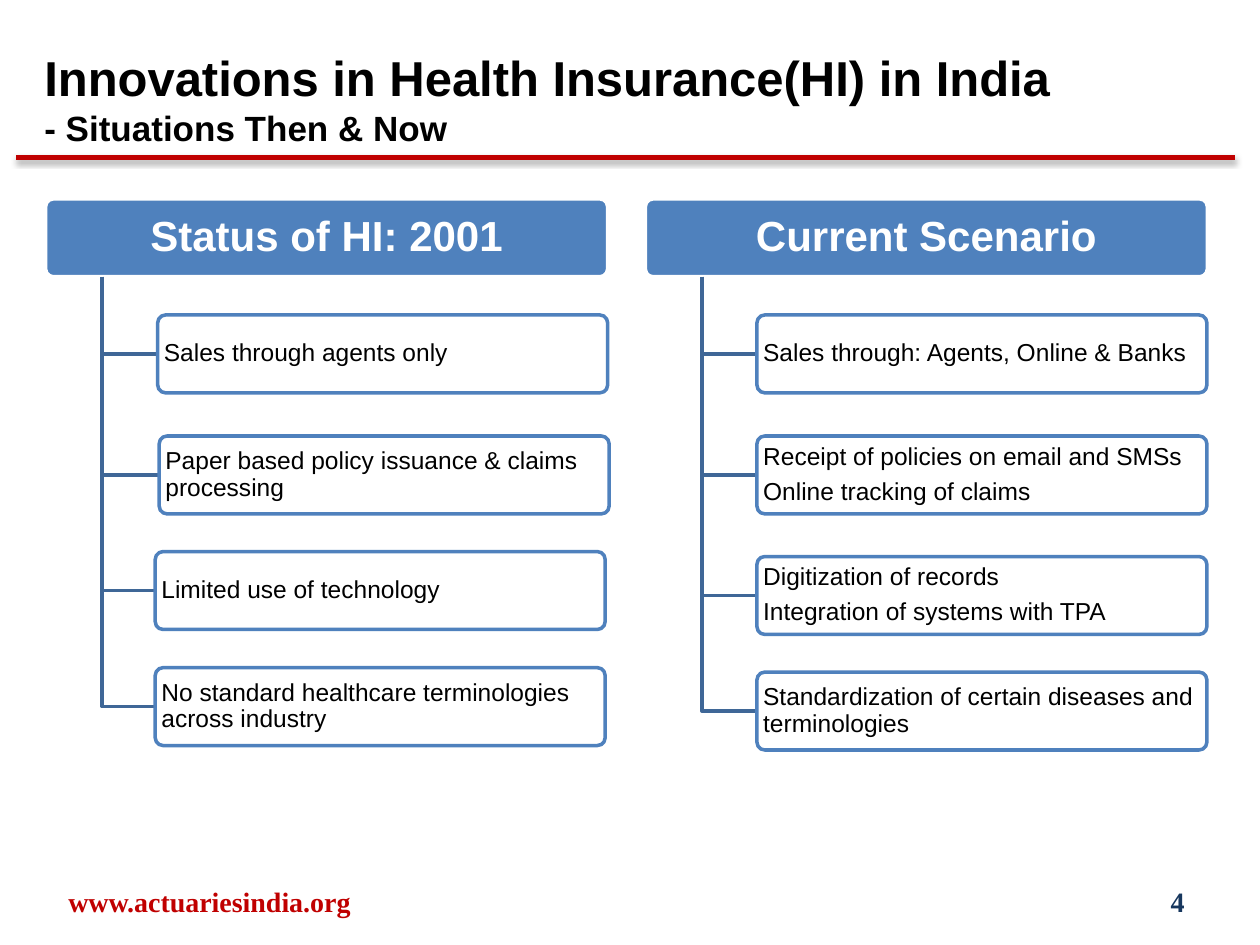
import pptx
import pptx.dml.color
import pptx.enum.shapes
import pptx.enum.text
import pptx.oxml
import pptx.oxml.ns
import pptx.util

Cm, Pt = pptx.util.Cm, pptx.util.Pt
SHAPE = pptx.enum.shapes.MSO_SHAPE
ALIGN = pptx.enum.text.PP_ALIGN
ANCHOR = pptx.enum.text.MSO_ANCHOR
NS = pptx.oxml.ns.nsdecls("a")

COLORS = {
    "black": "000000", "white": "FFFFFF", "red": "C00000",
    "navy": "17375E", "blue": "4F81BD", "branch": "3F6797",
}

# Column geometry in centimetres
HEAD_TOP, HEAD_W, BOX_W, BOX_H = 4.01, 11.33, 9.07, 1.57
TRUNK_DX = 1.14

# Each column: left edge, heading, boxes as (left, top, lines)
COLUMNS = [
    (0.92, "Status of HI: 2001", [
        (3.18, 6.35, ["Sales through agents only"]),
        (3.21, 8.79, ["Paper based policy issuance & claims processing"]),
        (3.13, 11.12, ["Limited use of technology"]),
        (3.13, 13.46, ["No standard healthcare terminologies across industry"]),
    ]),
    (13.01, "Current Scenario", [
        (15.26, 6.35, ["Sales through: Agents, Online & Banks"]),
        (15.26, 8.79, ["Receipt of policies on email and SMSs",
                       "Online tracking of claims"]),
        (15.26, 11.22, ["Digitization of records",
                        "Integration of systems with TPA"]),
        (15.26, 13.55, ["Standardization of certain diseases and terminologies"]),
    ]),
]


def rgb(name):
    return pptx.dml.color.RGBColor.from_string(COLORS[name])


def style(p, size, color, bold=False, font="Arial", align=ALIGN.LEFT):
    p.alignment = align
    p.font.name = font
    p.font.size = Pt(size)
    p.font.bold = bold
    p.font.color.rgb = rgb(color)


def add_title(s, lines):
    sp = s.shapes.title
    sp.left, sp.top, sp.width, sp.height = Cm(0.64), Cm(0.84), Cm(20.96), Cm(1.7)
    tf = sp.text_frame
    tf.text = "\n".join(text for text, size in lines)
    tf.auto_size = pptx.enum.text.MSO_AUTO_SIZE.NONE
    tf.vertical_anchor = ANCHOR.TOP
    for p, (text, size) in zip(tf.paragraphs, lines):
        style(p, size, "black", bold=True)


def add_rule(s):
    line = s.shapes.add_connector(pptx.enum.shapes.MSO_CONNECTOR.STRAIGHT,
                                  Cm(0.33), Cm(3.18), Cm(24.89), Cm(3.18))
    line.line.color.rgb = rgb("red")
    line.line.width = Pt(3)
    line._element.spPr.append(pptx.oxml.parse_xml(
        f'<a:effectLst {NS}><a:outerShdw blurRad="{Pt(3.1)}" dist="{Pt(1.6)}" '
        f'dir="5400000" rotWithShape="0"><a:srgbClr val="{COLORS["black"]}">'
        '<a:alpha val="38000"/></a:srgbClr></a:outerShdw></a:effectLst>'))


def add_footer(s, left, width, text, color, align):
    sp = s.shapes.add_textbox(Cm(left), Cm(17.65), Cm(width), Cm(1.02))
    tf = sp.text_frame
    tf.word_wrap = True
    tf.vertical_anchor = ANCHOR.MIDDLE
    tf.text = text
    style(tf.paragraphs[0], 16, color, True, "Times New Roman", align)


def add_box(s, left, top, width, lines, fill, line, inset, **font):
    sp = s.shapes.add_shape(SHAPE.ROUNDED_RECTANGLE,
                            Cm(left), Cm(top), Cm(width), Cm(BOX_H))
    sp.adjustments[0] = 0.1
    sp.shadow.inherit = False
    sp.fill.solid()
    sp.fill.fore_color.rgb = rgb(fill)
    sp.line.color.rgb = rgb(line)
    sp.line.width = Pt(2)
    tf = sp.text_frame
    tf.word_wrap = True
    tf.vertical_anchor = ANCHOR.MIDDLE
    tf.margin_left = tf.margin_right = Cm(inset)
    tf.margin_top = tf.margin_bottom = Cm(0.05)
    tf.text = "\n".join(lines)
    for p in tf.paragraphs:
        style(p, **font)
        p.line_spacing = 0.9
        p.space_after = Pt(font["size"] * 0.35)
    return sp


def add_branch(s, x, y, box_left, box_middle):
    builder = s.shapes.build_freeform(Cm(x), Cm(y))
    builder.add_line_segments([(Cm(x), Cm(box_middle)),
                               (Cm(box_left), Cm(box_middle))], close=False)
    sp = builder.convert_to_shape()
    sp.shadow.inherit = False
    sp.fill.background()
    sp.line.color.rgb = rgb("branch")
    sp.line.width = Pt(2)


def add_column(s, left, heading, boxes):
    add_box(s, left, HEAD_TOP, HEAD_W, [heading], "blue", "white", 0.13,
            size=24, color="white", bold=True, align=ALIGN.CENTER)
    for box_left, top, lines in boxes:
        add_branch(s, left + TRUNK_DX, HEAD_TOP + BOX_H, box_left, top + BOX_H / 2)
        sp = add_box(s, box_left, top, BOX_W, lines, "white", "blue", 0.08,
                     size=14, color="black")
        # Slightly transparent fill
        color = sp._element.spPr.find(".//" + pptx.oxml.ns.qn("a:srgbClr"))
        color.append(pptx.oxml.parse_xml(f'<a:alpha {NS} val="90000"/>'))


def main():
    prs = pptx.Presentation()
    prs.slide_width, prs.slide_height = Cm(25.4), Cm(19.05)
    s = prs.slides.add_slide(prs.slide_layouts[5])

    # Frame of the page
    add_rule(s)
    add_footer(s, 0.2, 8.05, "www.actuariesindia.org", "red", ALIGN.CENTER)
    add_footer(s, 18.21, 5.92, "4", "navy", ALIGN.RIGHT)
    add_title(s, [("Innovations in Health Insurance(HI) in India", 28),
                  ("- Situations Then & Now", 20)])

    # Then and now
    for column in COLUMNS:
        add_column(s, *column)

    prs.save("out.pptx")


if __name__ == "__main__":
    main()
